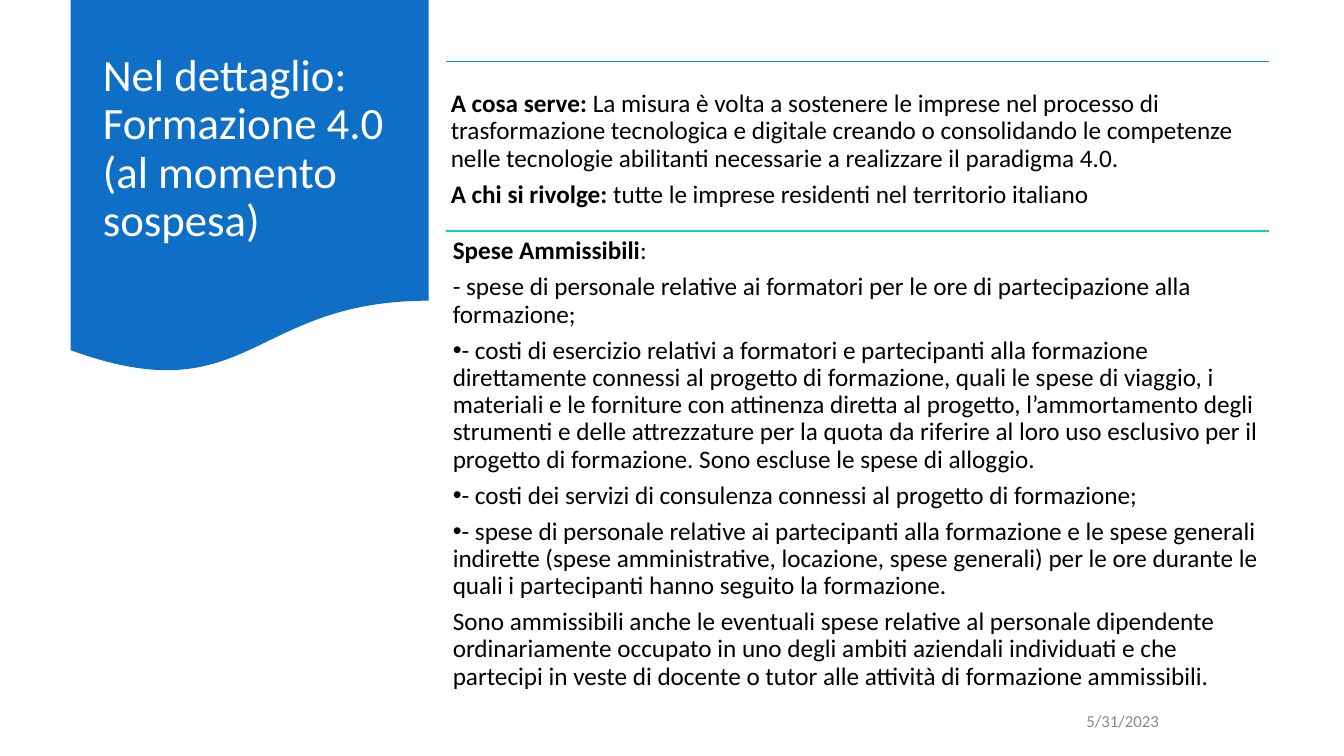
from dataclasses import dataclass

from lxml.etree import SubElement
from pptx import Presentation
from pptx.dml.color import RGBColor
from pptx.enum.shapes import MSO_CONNECTOR as Connector, MSO_SHAPE as Preset
from pptx.enum.text import MSO_ANCHOR as Anchor, MSO_AUTO_SIZE as AutoSize, PP_ALIGN as Align
from pptx.oxml.ns import qn
from pptx.util import Cm, Pt


@dataclass(frozen=True)
class Theme:
    """Colours, font and type sizes of the slide."""
    font: str = "Calibri"
    banner: str = "0F6FC6"
    light: str = "FFFFFF"
    dark: str = "000000"
    muted: str = "888888"
    title_size: float = 32
    body_size: float = 18
    date_size: float = 12
    line_spacing: float = 0.9
    space_before: float = 6.3


@dataclass(frozen=True)
class Box:
    """Position and size in centimetres."""
    left: float
    top: float
    width: float
    height: float


@dataclass(frozen=True)
class Passage:
    """One paragraph with an optional bold lead and bullet."""
    text: str
    lead: str = ""
    bullet: bool = False


@dataclass(frozen=True)
class Section:
    """A ruled block of passages."""
    box: Box
    rule_color: str
    inset: float
    top_inset: float
    passages: tuple[Passage, ...]


THEME = Theme()
BANNER = Box(1.78, 0, 9.02, 9.45)
TITLE = Box(2.34, 0.48, 8.03, 6.58)
DATE = Box(22.35, 17.65, 7.11, 1.02)
TITLE_PASSAGE = Passage("Nel dettaglio:\nFormazione 4.0 (al momento sospesa)")
SECTIONS = (
    Section(Box(11.23, 1.55, 20.75, 4.29), "009DD9", 0.13, 0.74, (
        Passage("La misura è volta a sostenere le imprese nel processo di trasformazione tecnologica "
                "e digitale creando o consolidando le competenze nelle tecnologie abilitanti "
                "necessarie a realizzare il paradigma 4.0.", lead="A cosa serve: "),
        Passage("tutte le imprese residenti nel territorio italiano", lead="A chi si rivolge: "),
    )),
    Section(Box(11.23, 5.82, 20.75, 13.64), "0ACFD8", 0.18, 0.18, (
        Passage(":", lead="Spese Ammissibili"),
        Passage("- spese di personale relative ai formatori per le ore di partecipazione alla formazione;"),
        Passage("- costi di esercizio relativi a formatori e partecipanti alla formazione direttamente "
                "connessi al progetto di formazione, quali le spese di viaggio, i materiali e le "
                "forniture con attinenza diretta al progetto, l’ammortamento degli strumenti e delle "
                "attrezzature per la quota da riferire al loro uso esclusivo per il progetto di "
                "formazione. Sono escluse le spese di alloggio.", bullet=True),
        Passage("- costi dei servizi di consulenza connessi al progetto di formazione;", bullet=True),
        Passage("- spese di personale relative ai partecipanti alla formazione e le spese generali "
                "indirette (spese amministrative, locazione, spese generali) per le ore durante le "
                "quali i partecipanti hanno seguito la formazione.", bullet=True),
        Passage("Sono ammissibili anche le eventuali spese relative al personale dipendente "
                "ordinariamente occupato in uno degli ambiti aziendali individuati e che partecipi "
                "in veste di docente o tutor alle attività di formazione ammissibili."),
    )),
)


def place(shape, box: Box) -> None:
    """Move and size a shape."""
    shape.left, shape.top = Cm(box.left), Cm(box.top)
    shape.width, shape.height = Cm(box.width), Cm(box.height)


def set_bullet(paragraph, bullet: bool) -> None:
    """Give a paragraph a hanging bullet or none."""
    properties = paragraph._p.get_or_add_pPr()
    properties.set("marL", "0")
    properties.set("indent", str(-Cm(0.3) if bullet else 0))
    if not bullet:
        SubElement(properties, qn("a:buNone"))
        return
    SubElement(SubElement(properties, qn("a:buClr")), qn("a:srgbClr"), val=THEME.dark)
    SubElement(properties, qn("a:buFont"), typeface="Arial")
    SubElement(properties, qn("a:buChar"), char="•")


def add_run(paragraph, text: str, *, size: float, color: str, bold: bool = False) -> None:
    """Append one formatted run."""
    run = paragraph.add_run()
    run.text = text
    run.font.name, run.font.size, run.font.bold = THEME.font, Pt(size), bold
    run.font.color.rgb = RGBColor.from_string(color)


def write(shape, passages: tuple[Passage, ...], *, size: float, color: str,
          anchor: Anchor = Anchor.TOP, align: Align = Align.LEFT, spacing: float = THEME.line_spacing,
          inset: float = 0.25, top_inset: float = 0.13) -> None:
    """Fill a shape with passages in one format."""
    frame = shape.text_frame
    frame.word_wrap, frame.auto_size, frame.vertical_anchor = True, AutoSize.NONE, anchor
    frame.margin_left = frame.margin_right = Cm(inset)
    frame.margin_top, frame.margin_bottom = Cm(top_inset), Cm(0.13)
    for index, passage in enumerate(passages):
        paragraph = frame.add_paragraph() if index else frame.paragraphs[0]
        set_bullet(paragraph, passage.bullet)
        paragraph.alignment, paragraph.line_spacing = align, spacing
        paragraph.space_before = Pt(THEME.space_before if index else 0)
        paragraph.space_after = Pt(0)
        if passage.lead:
            add_run(paragraph, passage.lead, size=size, color=color, bold=True)
        for number, line in enumerate(passage.text.split("\n")):
            if number:
                paragraph.add_line_break()
                SubElement(paragraph._p[-1], qn("a:rPr"), sz=str(int(size * 100)))
            add_run(paragraph, line, size=size, color=color)


def add_banner(slide) -> None:
    """Draw the wavy banner behind the title."""
    banner = slide.shapes.add_shape(Preset.FLOWCHART_DOCUMENT, 0, 0, 0, 0)
    place(banner, BANNER)
    banner.shadow.inherit = False
    banner.fill.solid()
    banner.fill.fore_color.rgb = RGBColor.from_string(THEME.banner)
    banner.line.fill.background()
    slide.shapes._spTree.insert(2, banner._element)


def add_section(slide, placeholder, section: Section) -> None:
    """Draw a rule and the text below it."""
    box = section.box
    rule = slide.shapes.add_connector(Connector.STRAIGHT, Cm(box.left), Cm(box.top),
                                      Cm(box.left + box.width), Cm(box.top))
    rule.line.color.rgb = RGBColor.from_string(section.rule_color)
    rule.line.width = Pt(1)
    SubElement(rule._element.spPr, qn("a:effectLst"))
    place(placeholder, box)
    write(placeholder, section.passages, size=THEME.body_size, color=THEME.dark,
          inset=section.inset, top_inset=section.top_inset)


def main() -> None:
    """Build and save the slide."""
    presentation = Presentation()
    presentation.slide_width, presentation.slide_height = Cm(33.87), Cm(19.05)
    slide = presentation.slides.add_slide(presentation.slide_layouts.get_by_name("Two Content"))
    title, *bodies = slide.placeholders
    add_banner(slide)
    place(title, TITLE)
    write(title, (TITLE_PASSAGE,), size=THEME.title_size, color=THEME.light, anchor=Anchor.MIDDLE)
    for placeholder, section in zip(bodies, SECTIONS):
        add_section(slide, placeholder, section)
    date = slide.shapes.add_textbox(0, 0, 0, 0)
    place(date, DATE)
    write(date, (Passage("5/31/2023"),), size=THEME.date_size, color=THEME.muted,
          anchor=Anchor.MIDDLE, align=Align.RIGHT, spacing=1.0)
    presentation.save("out.pptx")


if __name__ == "__main__":
    main()
